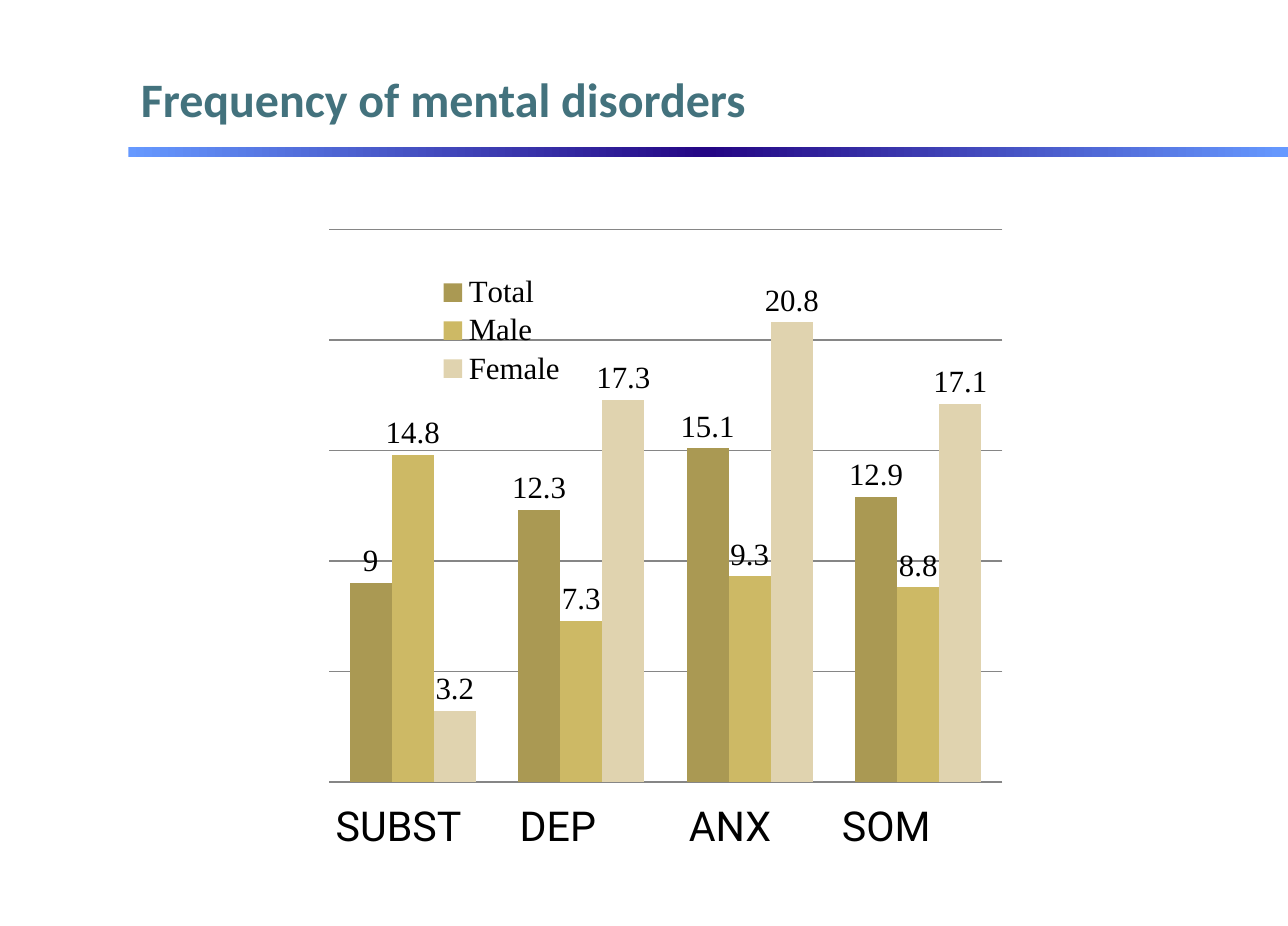
from copy import deepcopy

from lxml import etree
from pptx import Presentation
from pptx.chart.data import CategoryChartData
from pptx.dml.color import RGBColor
from pptx.enum.chart import XL_CHART_TYPE, XL_LABEL_POSITION, XL_LEGEND_POSITION
from pptx.enum.shapes import MSO_SHAPE
from pptx.enum.text import MSO_ANCHOR, PP_ALIGN
from pptx.oxml.ns import qn
from pptx.util import Inches, Pt

COLUMNS = XL_CHART_TYPE.COLUMN_CLUSTERED
OUTSIDE_END = XL_LABEL_POSITION.OUTSIDE_END
LEGEND_RIGHT = XL_LEGEND_POSITION.RIGHT
RECTANGLE = MSO_SHAPE.RECTANGLE
MIDDLE = MSO_ANCHOR.MIDDLE
LEFT = PP_ALIGN.LEFT

COLORS = {
    "title": "43727D",
    "text": "000000",
    "rule_end": "6699FF",
    "rule_center": "240684",
    "grid": "868686",
    "Total": "AA9953",
    "Male": "CDB965",
    "Female": "E0D3AF",
}
FREQUENCIES = {
    "Total": (9, 12.3, 15.1, 12.9),
    "Male": (14.8, 7.3, 9.3, 8.8),
    "Female": (3.2, 17.3, 20.8, 17.1),
}
# Each disorder with its distance from the left edge of the text, in inches
DISORDERS = (("SUBST", 0), ("DEP", 1.49), ("ANX", 2.86), ("SOM", 4.1))


def rgb(name):
    return RGBColor.from_string(COLORS[name])


def style_font(font, name, size, color, bold=False):
    font.name = name
    font.size = Pt(size)
    font.bold = bold
    font.color.rgb = rgb(color)


def add_title(slide, left, top, width, height):
    title = slide.shapes.title
    title.left, title.top = Inches(left), Inches(top)
    title.width, title.height = Inches(width), Inches(height)
    title.text_frame.vertical_anchor = MIDDLE
    paragraph = title.text_frame.paragraphs[0]
    paragraph.alignment = LEFT
    run = paragraph.add_run()
    run.text = "Frequency of mental disorders"
    style_font(run.font, "Calibri", 28, "title", bold=True)


def add_title_rule(slide, left, top, width, height):
    rule = slide.shapes.add_shape(
        RECTANGLE, Inches(left), Inches(top), Inches(width), Inches(height))
    rule.shadow.inherit = False
    rule.line.fill.background()
    rule.fill.gradient()
    rule.fill.gradient_angle = 0
    # The gradient starts with two stops; a third one is needed
    stop_list = next(rule._element.iter(qn("a:gsLst")))
    stop_list.append(deepcopy(stop_list[-1]))
    stops = (("rule_end", 0), ("rule_center", 0.5), ("rule_end", 1))
    for stop, (color, position) in zip(rule.fill.gradient_stops, stops):
        stop.color.rgb = rgb(color)
        stop.position = position


def set_layout(element, x, y, width, height, inner=False):
    """Place a chart part by fractions of the chart area."""
    for old_layout in element.findall(qn("c:layout")):
        element.remove(old_layout)
    layout = etree.Element(qn("c:layout"))
    manual = etree.SubElement(layout, qn("c:manualLayout"))
    settings = [("layoutTarget", "inner")] if inner else []
    settings += [("xMode", "edge"), ("yMode", "edge"),
                 ("x", x), ("y", y), ("w", width), ("h", height)]
    for tag, value in settings:
        etree.SubElement(manual, qn(f"c:{tag}")).set("val", str(value))
    # The layout is the first child of a plot area, the second of a legend
    element.insert(0 if inner else 1, layout)


def add_frequency_chart(slide, left, top, width, height):
    data = CategoryChartData()
    data.categories = ["1", "2", "3", "4"]
    for name, values in FREQUENCIES.items():
        data.add_series(name, values)
    chart = slide.shapes.add_chart(
        COLUMNS, Inches(left), Inches(top), Inches(width), Inches(height),
        data).chart
    style_font(chart.font, "Times New Roman", 18, "text")
    chart.has_title = False

    # Axes
    chart.category_axis.visible = False
    value_axis = chart.value_axis
    value_axis.visible = False
    value_axis.minimum_scale, value_axis.maximum_scale = 0, 25
    value_axis.major_unit = 5
    value_axis.has_major_gridlines = True
    value_axis.major_gridlines.format.line.color.rgb = rgb("grid")
    value_axis.major_gridlines.format.line.width = Pt(0.75)

    # Columns and their values
    plot = chart.plots[0]
    plot.gap_width = 100
    plot.overlap = 0
    plot.vary_by_categories = False
    for series in plot.series:
        series.format.fill.solid()
        series.format.fill.fore_color.rgb = rgb(series.name)
        labels = series.data_labels
        labels.show_value = True
        labels.position = OUTSIDE_END
        style_font(labels.font, "Times New Roman", 18, "text")

    # Legend over the plot
    chart.has_legend = True
    legend = chart.legend
    legend.position = LEGEND_RIGHT
    legend.include_in_layout = True
    style_font(legend.font, "Times New Roman", 18, "text")
    set_layout(legend._element, 0.18, 0.12, 0.15, 0.2)
    plot_area = next(chart._chartSpace.iter(qn("c:plotArea")))
    set_layout(plot_area, 0.07, 0.05, 0.72, 0.93, inner=True)


def add_disorder_names(slide, left, top, width, height):
    box = slide.shapes.add_textbox(
        Inches(left), Inches(top), Inches(width), Inches(height))
    box.text_frame.word_wrap = True
    paragraph = box.text_frame.paragraphs[0]
    properties = paragraph._p.get_or_add_pPr()
    tab_list = etree.SubElement(properties, qn("a:tabLst"))
    for name, offset in DISORDERS:
        if offset:
            tab = etree.SubElement(tab_list, qn("a:tab"))
            tab.set("pos", str(Inches(offset)))
            tab.set("algn", "l")
        run = paragraph.add_run()
        run.text = f"\t{name}" if offset else name
        style_font(run.font, "Roboto", 24, "text")


def main():
    presentation = Presentation()
    presentation.slide_width = Inches(10.43)
    presentation.slide_height = Inches(7.5)
    title_only = presentation.slide_layouts[5]
    slide = presentation.slides.add_slide(title_only)
    add_title_rule(slide, 1.04, 1.19, 9.39, 0.08)
    add_title(slide, 1.04, 0.44, 9.02, 0.72)
    add_frequency_chart(slide, 2.13, 1.62, 7.58, 4.81)
    add_disorder_names(slide, 2.62, 6.43, 6.14, 0.5)
    presentation.save("out.pptx")


if __name__ == "__main__":
    main()
